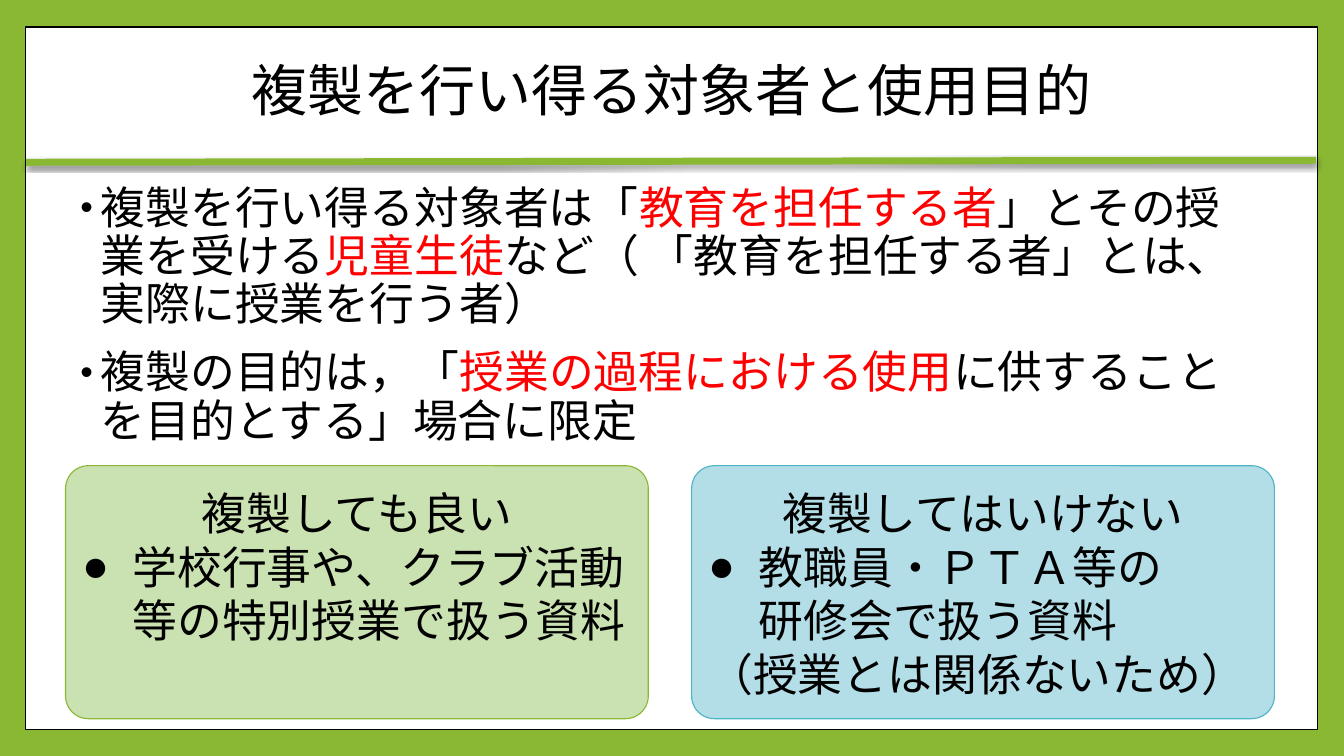
from lxml import etree
from pptx import Presentation
from pptx import util as u
from pptx.dml.color import RGBColor
from pptx.enum import shapes, text
from pptx.oxml.ns import qn

PX = 9144
BLACK, RED, WHITE, GREEN = "000000", "FF0000", "FFFFFF", "8AB833"

ALLOWED = [
    dict(runs=["複製しても良い"], align="CENTER"),
    dict(runs=["学校行事や、クラブ活動等の特別授業で扱う資料"], bullet="●", indent=50),
]
FORBIDDEN = [
    dict(runs=["複製してはいけない"], align="CENTER"),
    dict(runs=["教職員・ＰＴＡ等の\v研修会で扱う資料"], bullet="●", indent=50),
    dict(runs=["（授業とは関係ないため）"]),
]
RULES = [
    ["複製を行い得る対象者は「", "*教育を担任する者", "」とその授業を受ける",
     "*児童生徒", "など（ 「教育を担任する者」とは、実際に授業を行う者）"],
    ["複製の目的は，「", "*授業の過程における使用",
     "に供することを目的とする」場合に限定"],
]


def px(*lengths):
    return [u.Emu(length * PX) for length in lengths]


def paint(color_format, value):
    color_format.rgb = RGBColor.from_string(value)


def fill(target, value):
    target.fill.solid()
    paint(target.fill.fore_color, value)


def add_bullet(paragraph, mark, indent, hanging, percent):
    props = paragraph._p.get_or_add_pPr()
    props.set("marL", str(indent * PX))
    props.set("indent", str(-hanging * PX))
    color = etree.SubElement(props, qn("a:buClr"))
    etree.SubElement(color, qn("a:srgbClr"), val=BLACK)
    etree.SubElement(props, qn("a:buSzPct"), val=str(percent * 1000))
    etree.SubElement(props, qn("a:buFont"), typeface="Arial")
    etree.SubElement(props, qn("a:buChar"), char=mark)


def write(frame, runs, size=32, font="Arial", align="LEFT", line=1.0, before=0,
          bullet=None, indent=0, hanging=None, percent=100):
    fresh = not frame.paragraphs[0].runs
    paragraph = frame.paragraphs[0] if fresh else frame.add_paragraph()
    paragraph.alignment = text.PP_ALIGN[align]
    paragraph.line_spacing = line
    paragraph.space_before = u.Pt(before)
    if bullet:
        add_bullet(paragraph, bullet, indent, hanging or indent, percent)
    for words in runs:
        for position, part in enumerate(words.lstrip("*").split("\v")):
            if position:
                paragraph.add_line_break()
            run = paragraph.add_run()
            run.text = part
            run.font.size = u.Pt(size)
            run.font.name = font
            paint(run.font.color, RED if words.startswith("*") else BLACK)


def add_panel(slide, kind, box, color, outline, weight):
    panel = slide.shapes.add_shape(kind, *px(*box))
    panel.shadow.inherit = False
    fill(panel, color)
    paint(panel.line.color, outline)
    panel.line.width = u.Pt(weight)
    return panel


def add_divider(slide, start, end):
    divider = slide.shapes.add_connector(
        shapes.MSO_CONNECTOR.STRAIGHT, *px(*start, *end))
    paint(divider.line.color, GREEN)
    divider.line.width = u.Pt(5)
    effects = etree.SubElement(divider._element.spPr, qn("a:effectLst"))
    shadow = etree.SubElement(
        effects, qn("a:outerShdw"), blurRad=str(u.Pt(3)), dist=str(u.Pt(2)),
        dir="5400000", rotWithShape="0")
    color = etree.SubElement(shadow, qn("a:srgbClr"), val=BLACK)
    etree.SubElement(color, qn("a:alpha"), val="45000")


def add_heading(slide, box):
    left, top, width, height = box
    heading = slide.shapes.title
    heading.left, heading.top, heading.width, heading.height = px(*box)
    frame = heading.text_frame
    frame.word_wrap = True
    frame.auto_size = text.MSO_AUTO_SIZE.NONE
    frame.vertical_anchor = text.MSO_ANCHOR.MIDDLE
    write(frame, ["複製を行い得る対象者と使用目的"], size=40, font="Cabin",
          align="CENTER", line=0.9)
    slide.shapes._spTree.append(heading._element)
    add_divider(slide, (left, top + height + 11), (left + width - 1, top + height + 9))


def add_rules(slide, box):
    frame = slide.shapes.add_textbox(*px(*box)).text_frame
    frame.word_wrap = True
    for runs in RULES:
        write(frame, runs, line=0.9, before=14, bullet="•", indent=25,
              hanging=20, percent=80)


def add_card(slide, box, color, outline, paragraphs):
    card = add_panel(slide, shapes.MSO_SHAPE.ROUNDED_RECTANGLE, box, color, outline, 0.79)
    card.adjustments[0] = 0.09
    frame = card.text_frame
    frame.word_wrap = True
    frame.vertical_anchor = text.MSO_ANCHOR.TOP
    frame.margin_top = u.Emu(13 * PX)
    for paragraph in paragraphs:
        write(frame, **paragraph)


def add_cards(slide, box):
    left, top, width, height = box
    gap = 43
    card_width = (width - gap) // 2
    cards = [("CAE1B1", GREEN, ALLOWED), ("B4DEE7", "4AB5C4", FORBIDDEN)]
    for column, card in enumerate(cards):
        card_left = left + column * (card_width + gap)
        add_card(slide, (card_left, top, card_width, height), *card)


def main():
    deck = Presentation()
    deck.slide_width, deck.slide_height = px(1333, 750)
    slide = deck.slides.add_slide(deck.slide_layouts[5])
    fill(slide.background, GREEN)
    add_panel(slide, shapes.MSO_SHAPE.RECTANGLE, (25, 27, 1282, 697), WHITE, BLACK, 1)
    add_heading(slide, (26, 36, 1280, 114))
    add_rules(slide, (65, 179, 1200, 275))
    add_cards(slide, (65, 462, 1199, 251))
    deck.save("out.pptx")


if __name__ == "__main__":
    main()
